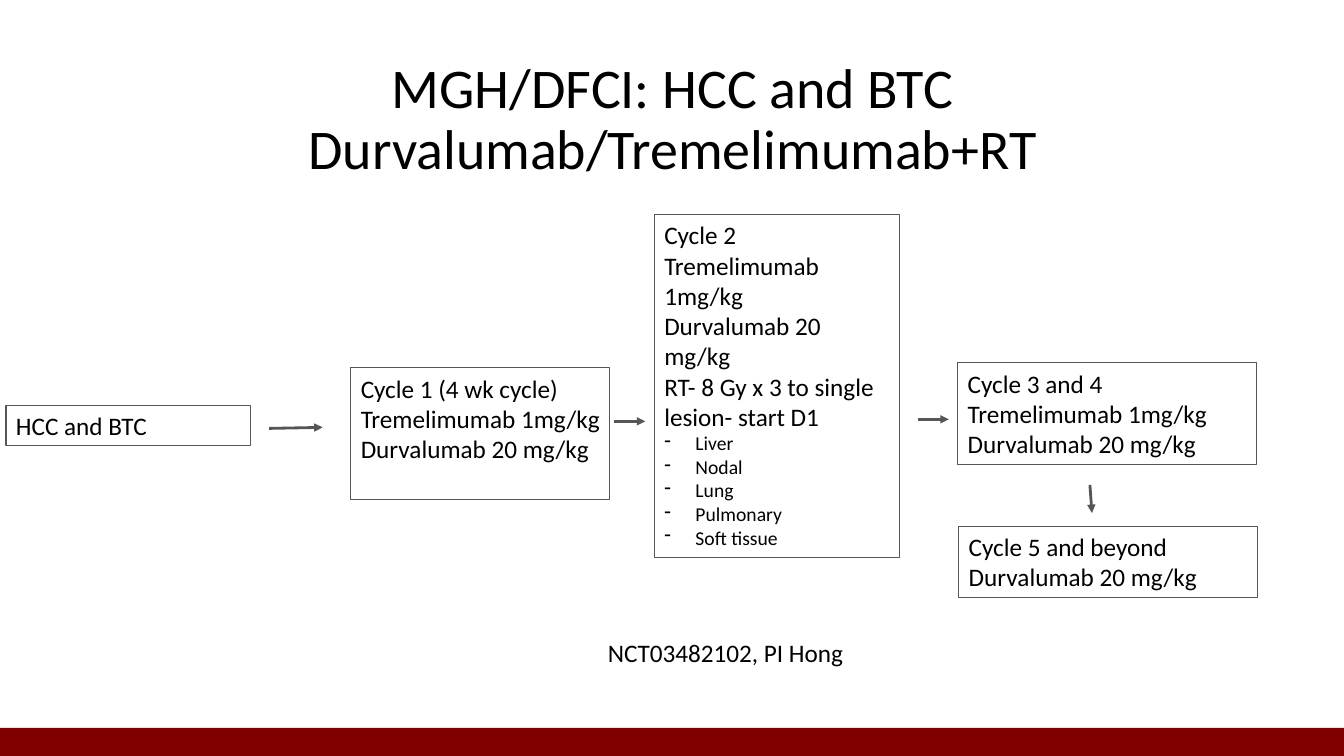
import pptx
import pptx.util
import pptx.dml.color
import pptx.enum.shapes
import pptx.enum.text
import pptx.oxml
import pptx.oxml.ns
from pptx.util import Inches

BLACK = "000000"
GRAY = "565656"
MAROON = "800000"


def color(hex_string):
    return pptx.dml.color.RGBColor.from_string(hex_string)


class TrialSlide:
    def __init__(self, presentation, font="Calibri"):
        self.slide = presentation.slides.add_slide(presentation.slide_layouts[5])
        self.shapes = self.slide.shapes
        self.font = font

    def format_paragraph(self, paragraph, size):
        for run in paragraph.runs:
            run.font.name = self.font
            run.font.size = pptx.util.Pt(size)
            run.font.color.rgb = color(BLACK)

    def title(self, text, left, top, width, height):
        shape = self.shapes.title
        shape.left, shape.top = Inches(left), Inches(top)
        shape.width, shape.height = Inches(width), Inches(height)
        frame = shape.text_frame
        frame.text = text
        frame.word_wrap = True
        frame.auto_size = pptx.enum.text.MSO_AUTO_SIZE.NONE
        frame.vertical_anchor = pptx.enum.text.MSO_ANCHOR.BOTTOM
        for paragraph in frame.paragraphs:
            paragraph.alignment = pptx.enum.text.PP_ALIGN.CENTER
            paragraph.line_spacing = 0.9
            self.format_paragraph(paragraph, 40)

    def bar(self, left, top, width, height, fill):
        shape = self.shapes.add_shape(
            pptx.enum.shapes.MSO_SHAPE.RECTANGLE,
            Inches(left), Inches(top), Inches(width), Inches(height))
        shape.shadow.inherit = False
        shape.fill.solid()
        shape.fill.fore_color.rgb = color(fill)
        shape.line.fill.background()

    def text_box(self, lines, left, top, width, height, bullets=(), outlined=True):
        shape = self.shapes.add_textbox(
            Inches(left), Inches(top), Inches(width), Inches(height))
        if outlined:
            shape.line.color.rgb = color(GRAY)
            shape.line.width = pptx.util.Pt(0.75)
        frame = shape.text_frame
        frame.text = "\n".join([*lines, *bullets])
        frame.word_wrap = True
        for index, paragraph in enumerate(frame.paragraphs):
            is_bullet = index >= len(lines)
            if is_bullet:
                self.dash(paragraph)
            self.format_paragraph(paragraph, 14 if is_bullet else 18)

    def dash(self, paragraph):
        """Give the paragraph a hanging dash bullet."""
        properties = paragraph._p.get_or_add_pPr()
        indent = Inches(0.31)
        properties.set("marL", str(indent))
        properties.set("indent", str(-indent))
        bullet = pptx.oxml.parse_xml(
            f'<a:buChar {pptx.oxml.ns.nsdecls("a")} char="-"/>')
        properties.append(bullet)

    def arrow(self, start_x, start_y, end_x, end_y):
        connector = self.shapes.add_connector(
            pptx.enum.shapes.MSO_CONNECTOR.STRAIGHT,
            Inches(start_x), Inches(start_y), Inches(end_x), Inches(end_y))
        connector.line.color.rgb = color(GRAY)
        connector.line.width = pptx.util.Pt(2)
        namespace = pptx.oxml.ns.nsdecls("a")
        connector.line._get_or_add_ln().append(
            pptx.oxml.parse_xml(f'<a:tailEnd {namespace} type="triangle"/>'))
        connector._element.spPr.append(
            pptx.oxml.parse_xml(f"<a:effectLst {namespace}/>"))


def main():
    presentation = pptx.Presentation()
    presentation.slide_width = Inches(13.33)
    presentation.slide_height = Inches(7.5)

    trial = TrialSlide(presentation)
    trial.bar(0, 7.22, 13.33, 0.28, MAROON)
    trial.title("MGH/DFCI: HCC and BTC\nDurvalumab/Tremelimumab+RT",
                0.92, 0.4, 11.5, 1.45)

    tremelimumab = "Tremelimumab 1mg/kg"
    durvalumab = "Durvalumab 20 mg/kg"
    combination = [tremelimumab, durvalumab]
    trial.text_box(["HCC and BTC"], 0.06, 4.02, 2.43, 0.4)
    trial.text_box(["Cycle 1 (4 wk cycle)", *combination], 3.48, 3.65, 2.57, 1.31)
    trial.text_box(
        ["Cycle 2", *combination, "RT- 8 Gy x 3 to single lesion- start D1"],
        6.49, 2.13, 2.43, 3.4,
        bullets=["Liver", "Nodal", "Lung", "Pulmonary", "Soft tissue"])
    trial.text_box(["Cycle 3 and 4", *combination], 9.5, 3.6, 2.96, 1.01)
    trial.text_box(["Cycle 5 and beyond", durvalumab], 9.51, 5.22, 2.96, 0.71)
    trial.text_box(["NCT03482102, PI Hong"], 5.93, 6.27, 4.8, 0.4, outlined=False)

    for ends in [(2.67, 4.25, 3.2, 4.24), (6.09, 4.18, 6.4, 4.18),
                 (9.1, 4.16, 9.41, 4.16), (10.81, 4.81, 10.83, 5.09)]:
        trial.arrow(*ends)

    presentation.save("out.pptx")


if __name__ == "__main__":
    main()
